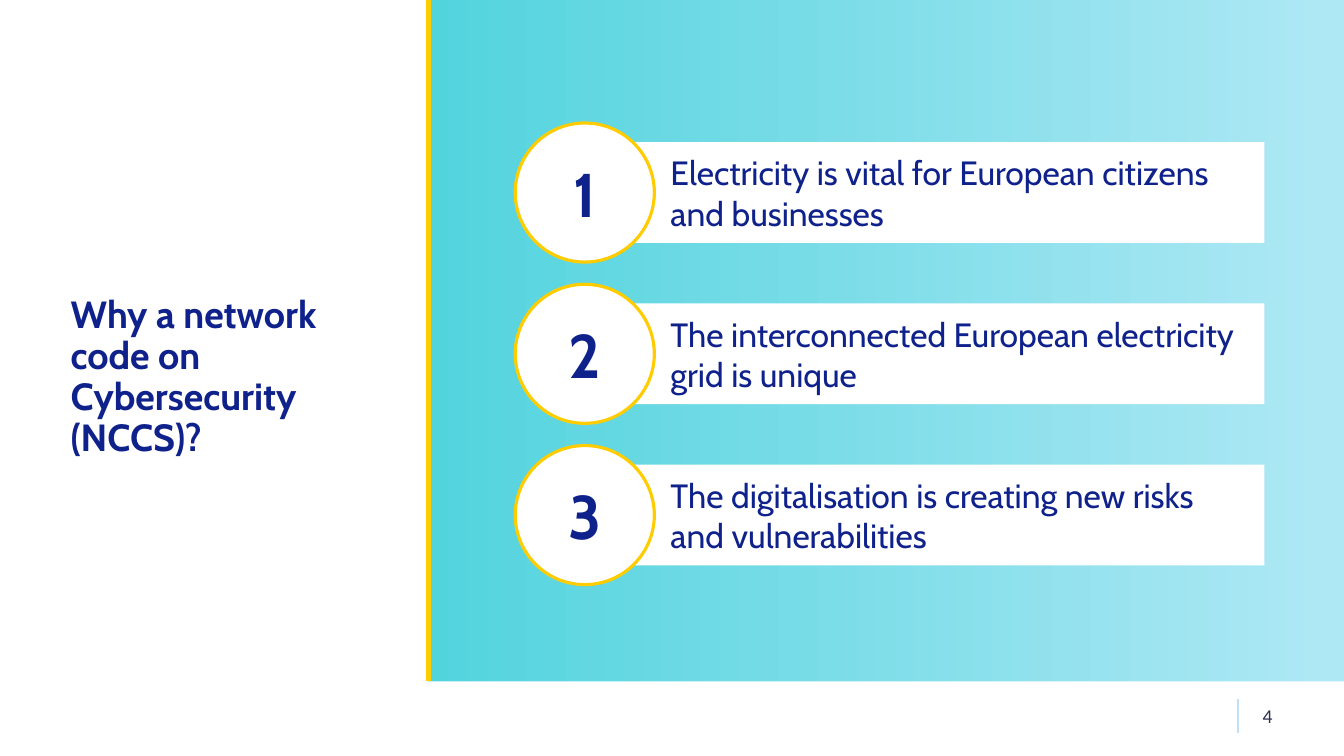
from pptx import Presentation
from pptx.dml.color import RGBColor
from pptx.enum.shapes import MSO_CONNECTOR as LINE, MSO_SHAPE as SHAPE
from pptx.enum.text import MSO_ANCHOR as ANCHOR, MSO_AUTO_SIZE as FIT, PP_ALIGN as ALIGN
from pptx.oxml.ns import qn
from pptx.util import Inches, Pt
from lxml import etree

WHITE, NAVY, GOLD = "FFFFFF", "0F218B", "FFCC00"
REASONS = [
    "Electricity is vital for European citizens and businesses",
    "The interconnected European electricity grid is unique",
    "The digitalisation is creating new risks and vulnerabilities",
]


def color(code):
    return RGBColor.from_string(code)


def write(shape, text, size, align=ALIGN.LEFT, bold=False, font="Cabin", ink=NAVY):
    frame = shape.text_frame
    frame.text = text
    frame.word_wrap = True
    frame.auto_size = FIT.NONE
    frame.vertical_anchor = ANCHOR.MIDDLE
    para = frame.paragraphs[0]
    para.alignment = align
    para.font.name = font
    para.font.size = Pt(size)
    para.font.bold = bold
    para.font.color.rgb = color(ink)
    return para


deck = Presentation()
deck.slide_width, deck.slide_height = Inches(13.33), Inches(7.5)
slide = deck.slides.add_slide(deck.slide_layouts[5])
shapes = slide.shapes

back = slide.background.fill
back.gradient()
back.gradient_angle = 180
for stop, code, place in zip(back.gradient_stops, ("AFE8F5", "25CAD2"), (0, 1)):
    stop.color.rgb = color(code)
    stop.position = place

panels = [(0, 6.76, 13.33, 0.74), (0, 0, 4.25, 7.5)]
rules = [(12.28, 6.93, 7.27, "C1E0F7", 1), (4.25, -0.07, 6.76, GOLD, 3)]
for box, (x, top, end, code, width) in zip(panels, rules):
    panel = shapes.add_shape(SHAPE.RECTANGLE, *map(Inches, box))
    panel.shadow.inherit = False
    panel.fill.solid()
    panel.fill.fore_color.rgb = color(WHITE)
    panel.line.fill.background()
    rule = shapes.add_connector(LINE.STRAIGHT, *map(Inches, (x, top, x, end)))
    rule.line.color.rgb = color(code)
    rule.line.width = Pt(width)
    etree.SubElement(rule.element.spPr, qn("a:effectLst"))

title = shapes.title
title.element.getparent().append(title.element)
title.left, title.top, title.width, title.height = map(Inches, (0.6, 3.3, 2.94, 0.89))
para = write(title, "Why a network code on Cybersecurity (NCCS)?", 27, bold=True)
para.line_spacing = 0.9

number = shapes.add_textbox(*map(Inches, (12.28, 6.9, 0.44, 0.4)))
write(number, "4", 14, ALIGN.RIGHT, font="Calibri", ink="2C3051")

for row, reason in enumerate(REASONS):
    top = 1.22 + 1.6 * row
    group = shapes.add_group_shape()
    bar = group.shapes.add_shape(
        SHAPE.RECTANGLE, *map(Inches, (6.06, top + 0.19, 6.48, 1)))
    disc = group.shapes.add_shape(
        SHAPE.OVAL, *map(Inches, (5.11, top, 1.38, 1.38)))
    for shape in (bar, disc):
        shape.shadow.inherit = False
        shape.fill.solid()
        shape.fill.fore_color.rgb = color(WHITE)
    bar.line.fill.background()
    bar.text_frame.margin_left = Inches(0.59)
    write(bar, reason, 24)
    disc.line.color.rgb = color(GOLD)
    disc.line.width = Pt(2.25)
    write(disc, str(row + 1), 44, ALIGN.CENTER, bold=True)

deck.save("out.pptx")
